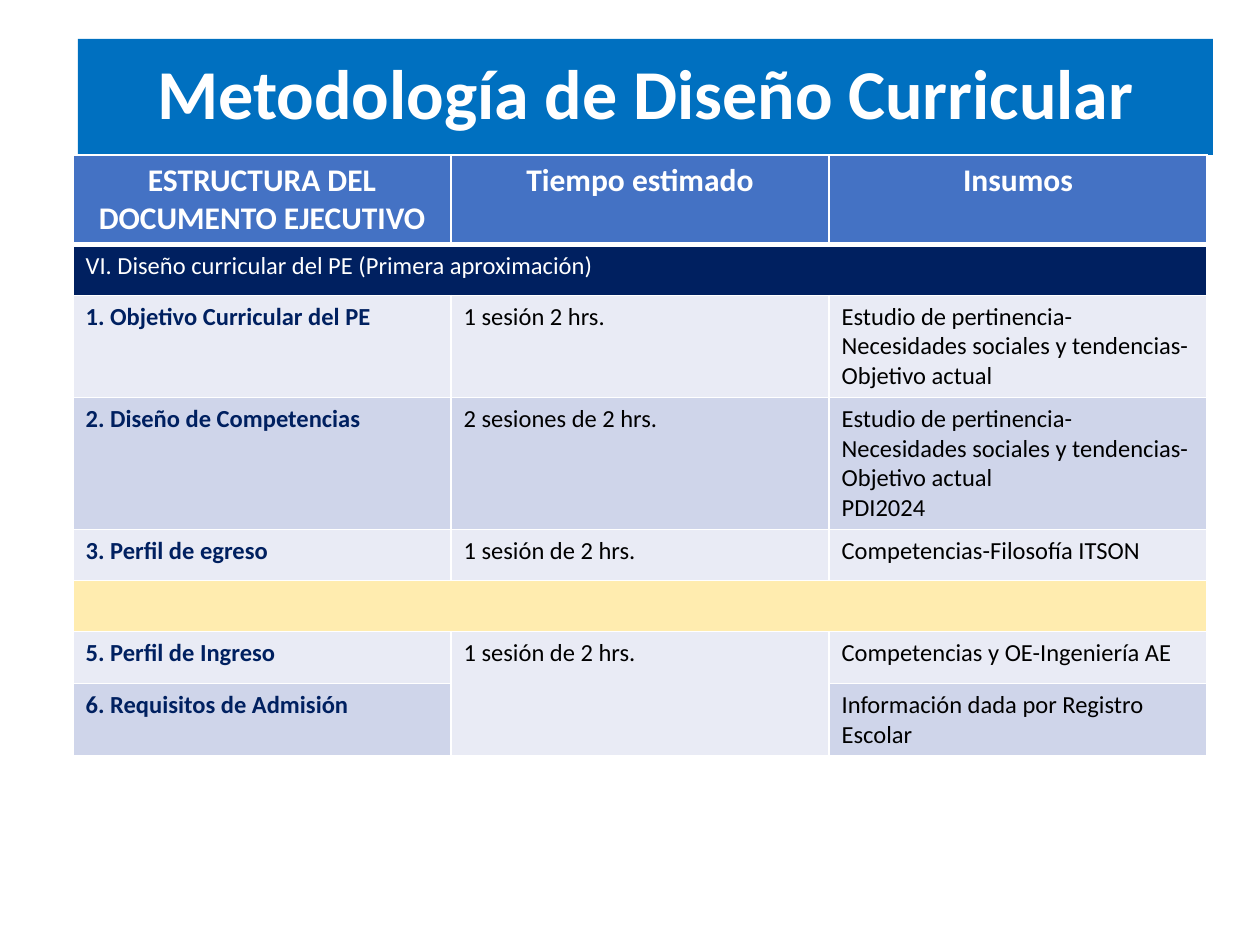
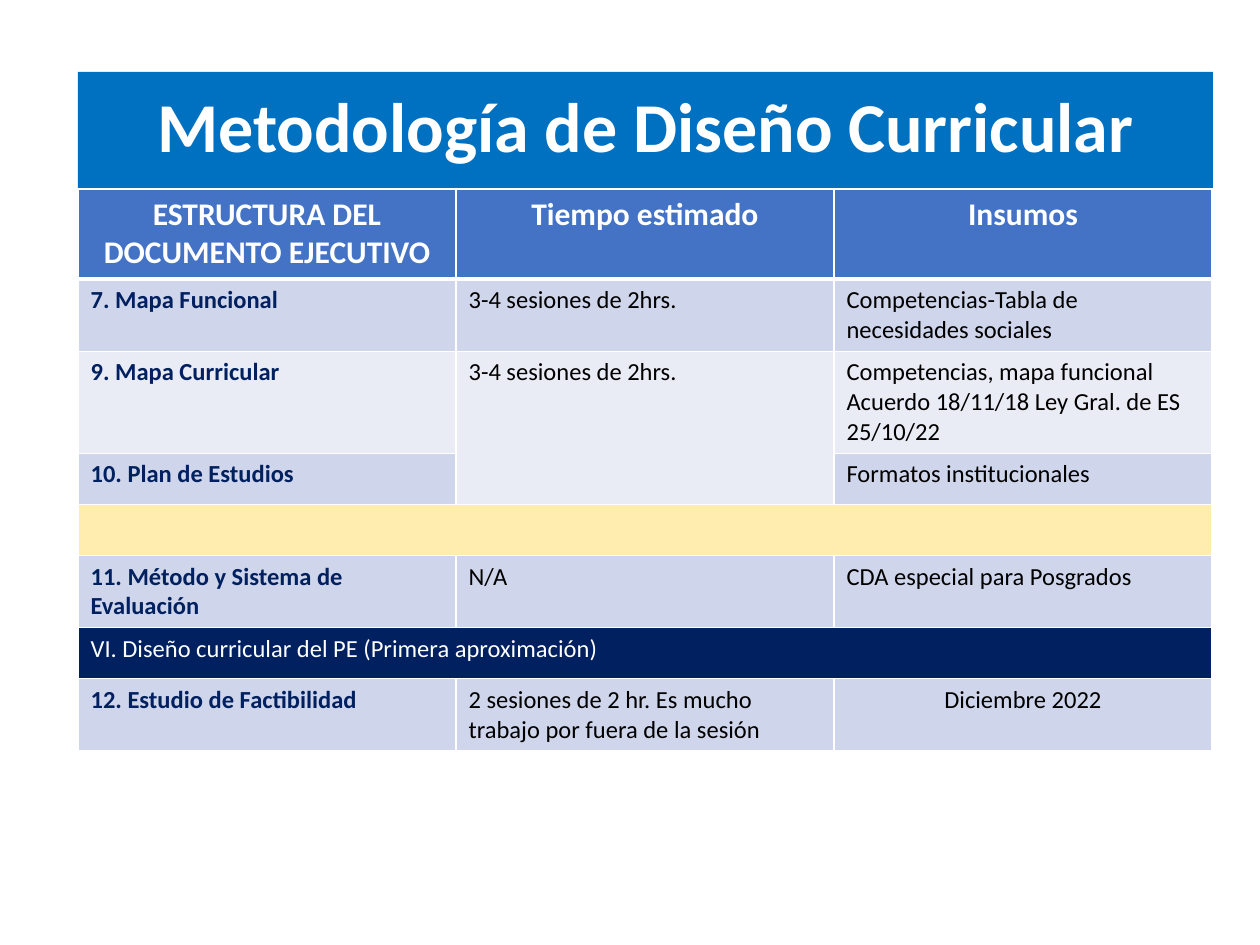
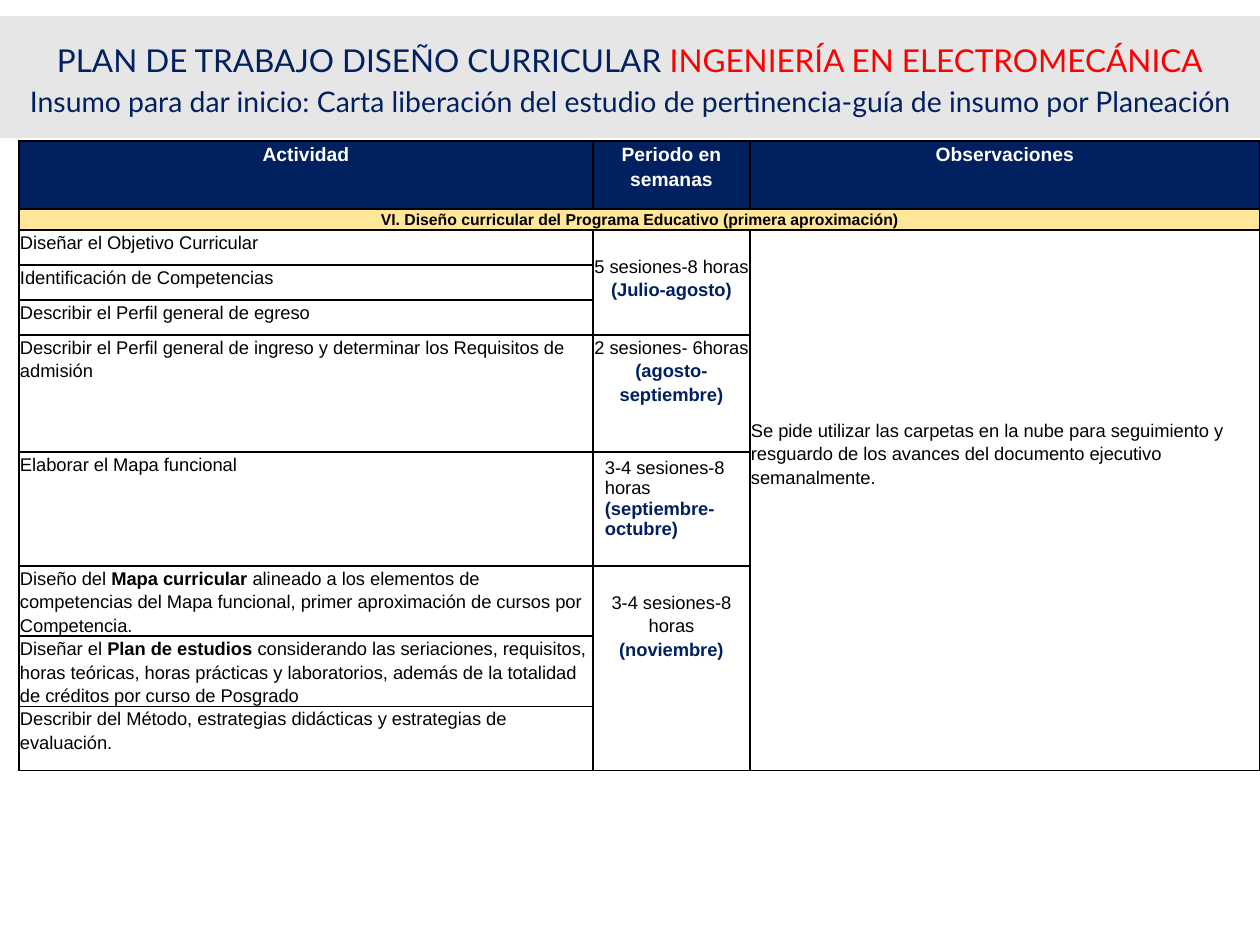
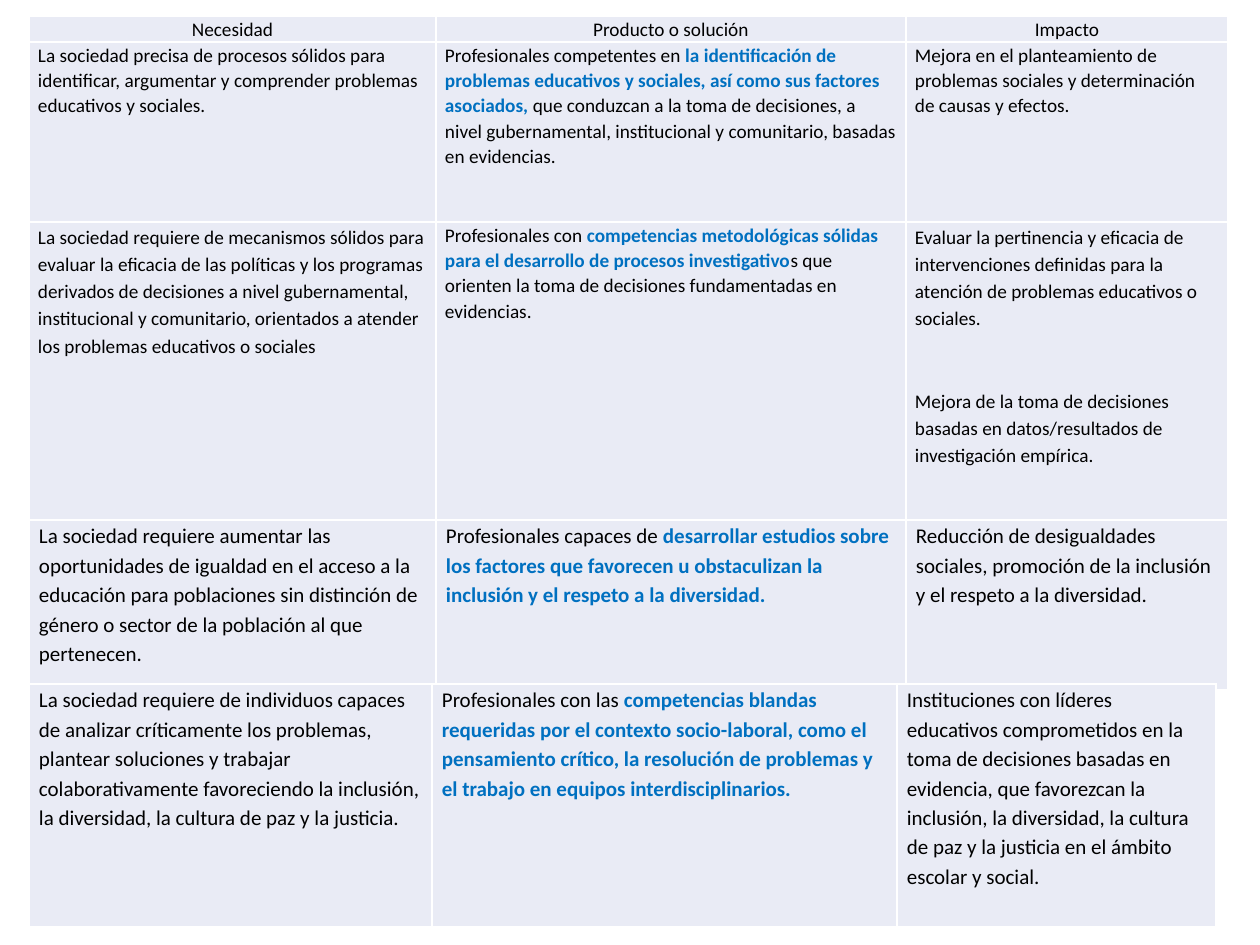
import dataclasses

import lxml.etree
import pptx
import pptx.dml.color
import pptx.enum.shapes
import pptx.enum.text
import pptx.oxml.ns
import pptx.util

PX = 914400 / 126
SLIDE_W, SLIDE_H = 1260, 945
ALIGN = pptx.enum.text.PP_ALIGN


@dataclasses.dataclass(frozen=True)
class Theme:
    white: str = "FFFFFF"
    black: str = "000000"
    navy: str = "002060"
    blue: str = "0070C0"
    header: str = "4472C4"
    light: str = "E9EBF5"
    mid: str = "CFD5EA"
    yellow: str = "FFECAF"
    gold: str = "FFE699"
    grey: str = "E7E6E6"
    red: str = "FF0000"
    title: float = 40
    heading: float = 18
    subheading: float = 16.2
    body: float = 14
    impact: float = 12
    need: float = 11
    plan: float = 10.5
    section: float = 9


T = Theme()


@dataclasses.dataclass(frozen=True)
class Style:
    size: float
    color: str = T.black
    bold: bool = False
    em_color: str = T.black
    font: str = "Calibri"
    align: int = ALIGN.LEFT
    line: float = 1.0
    after: float = 0
    gap: float = 0  # space before every paragraph but the first


# ---------- Content ----------

METHOD_TITLE = "Metodología de Diseño Curricular"
METHOD_HEADER = ("ESTRUCTURA DEL DOCUMENTO EJECUTIVO", "Tiempo estimado", "Insumos")
SECTION = "VI. Diseño curricular del PE (Primera aproximación)"
RELEVANCE = "Estudio de pertinencia-Necesidades sociales y tendencias-Objetivo actual"

# Each row: height, then one text for a full-width band or three cells.
# None continues the cell above; "\n" starts a paragraph.
METHOD_SLIDES = [
    dict(title_top=39, left=73, top=155, rows=[
        (89, METHOD_HEADER),
        (51, SECTION),
        (102, ("1. Objetivo Curricular del PE", "1 sesión 2 hrs.", RELEVANCE)),
        (132, ("2. Diseño de Competencias", "2 sesiones de 2 hrs.", RELEVANCE + "\nPDI2024")),
        (51, ("3. Perfil de egreso", "1 sesión de 2 hrs.", "Competencias-Filosofía ITSON")),
        (51, ""),
        (52, ("5. Perfil de Ingreso", "1 sesión de 2 hrs.", "Competencias y OE-Ingeniería AE")),
        (71, ("6. Requisitos de Admisión", None, "Información dada por Registro Escolar")),
    ]),
    dict(title_top=72, left=78, top=189, rows=[
        (90, METHOD_HEADER),
        (71, ("7. Mapa Funcional", "3-4 sesiones de 2hrs.",
              "Competencias-Tabla de necesidades sociales")),
        (102, ("9. Mapa Curricular", "3-4 sesiones de 2hrs.",
               "Competencias, mapa funcional\nAcuerdo 18/11/18 Ley Gral. de ES 25/10/22")),
        (51, ("10. Plan de Estudios", None, "Formatos institucionales")),
        (51, ""),
        (72, ("11. Método y Sistema de Evaluación", "N/A", "CDA especial para Posgrados")),
        (51, SECTION),
        (71, ("12. Estudio de Factibilidad",
              "2 sesiones de 2 hr. Es mucho trabajo por fuera de la sesión", "Diciembre 2022")),
    ]),
]
CENTRED_INPUTS = {"Diciembre 2022"}

PLAN_TITLE = [
    ("PLAN DE TRABAJO DISEÑO CURRICULAR ", T.heading, T.navy),
    ("INGENIERÍA EN ELECTROMECÁNICA", T.heading, T.red),
    "\n",
    ("Insumo para dar inicio: Carta liberación del estudio de pertinencia-guía de insumo "
     "por Planeación", T.subheading, T.navy),
]
PLAN_HEADER = ("Actividad", "Periodo en semanas", "Observaciones")
PLAN_SECTION = "VI. Diseño curricular del Programa Educativo (primera aproximación)"
PLAN_HEADER_H, PLAN_SECTION_H = 68, 21

# Asterisks enclose emphasised words.
PLAN_ACTIVITIES = [
    (35, "Diseñar el Objetivo Curricular"),
    (35, "Identificación de Competencias"),
    (35, "Describir el Perfil general de egreso"),
    (117, "Describir el Perfil general de ingreso y determinar los Requisitos de admisión"),
    (114, "Elaborar el Mapa funcional"),
    (70, "Diseño del *Mapa curricular* alineado a los elementos de competencias del Mapa "
         "funcional, primer aproximación de cursos por Competencia."),
    (70, "Diseñar el *Plan de estudios* considerando las seriaciones, requisitos, horas "
         "teóricas, horas prácticas y laboratorios, además de la totalidad de créditos por "
         "curso de Posgrado"),
    (64, "Describir del Método, estrategias didácticas y estrategias de evaluación."),
]
# Rows spanned, text, whether it is a centred block, top inset
PLAN_PERIODS = [
    (3, "5 sesiones-8 horas *(Julio-agosto)*", True, 24),
    (1, "2 sesiones- 6horas *(agosto-septiembre)*", True, 0),
    (1, "3-4 sesiones-8 horas *(septiembre-octubre)*", False, 6),
    (3, "3-4 sesiones-8 horas\n*(noviembre)*", True, 24),
]
PLAN_NOTE = ("Se pide utilizar las carpetas en la nube para seguimiento y resguardo de los "
             "avances del documento ejecutivo semanalmente.")

NEEDS_HEADER = ("Necesidad", "Producto o solución", "Impacto")
NEEDS_TABLES = [
    dict(top=16, widths=(407, 470, 322), size=T.need, inset=9, rows=[
        (26, NEEDS_HEADER),
        (180, (
            "La sociedad precisa de procesos sólidos para identificar, argumentar y comprender "
            "problemas educativos y sociales.",
            "Profesionales competentes en *la identificación de problemas educativos y sociales, "
            "así como sus factores asociados,* que conduzcan a la toma de decisiones, a nivel "
            "gubernamental, institucional y comunitario, basadas en evidencias.",
            "Mejora en el planteamiento de problemas sociales y determinación de causas y "
            "efectos.")),
        (299, (
            "La sociedad requiere de mecanismos sólidos para evaluar la eficacia de las políticas "
            "y los programas derivados de decisiones a nivel gubernamental, institucional y "
            "comunitario, orientados a atender los problemas educativos o sociales",
            "Profesionales con *competencias metodológicas sólidas para el desarrollo de procesos "
            "investigativo*s que orienten la toma de decisiones fundamentadas en evidencias.",
            "Evaluar la pertinencia y eficacia de intervenciones definidas para la atención de "
            "problemas educativos o sociales.\n"
            "Mejora de la toma de decisiones basadas en datos/resultados de investigación "
            "empírica.")),
    ], compact={(0, 0), (0, 1), (0, 2), (1, 0), (1, 1), (1, 2), (2, 1)}),
    dict(top=520, widths=(407, 470, 322), size=T.impact, inset=10, rows=[
        (170, (
            "La sociedad requiere aumentar las oportunidades de igualdad en el acceso a la "
            "educación para poblaciones sin distinción de género o sector de la población al que "
            "pertenecen.",
            "Profesionales capaces de *desarrollar estudios sobre los factores que favorecen u "
            "obstaculizan la inclusión y el respeto a la diversidad.*",
            "Reducción de desigualdades sociales, promoción de la inclusión y el respeto a la "
            "diversidad.")),
    ], compact=set()),
    dict(top=684, widths=(403, 465, 319), size=T.impact, inset=10, rows=[
        (243, (
            "La sociedad requiere de individuos capaces de analizar críticamente los problemas, "
            "plantear soluciones y trabajar colaborativamente favoreciendo la inclusión, la "
            "diversidad, la cultura de paz y la justicia.",
            "Profesionales con las *competencias blandas requeridas por el contexto "
            "socio-laboral, como el pensamiento crítico, la resolución de problemas y el trabajo "
            "en equipos interdisciplinarios.*",
            "Instituciones con líderes educativos comprometidos en la toma de decisiones basadas "
            "en evidencia, que favorezcan la inclusión, la diversidad, la cultura de paz y la "
            "justicia en el ámbito escolar y social.")),
    ], compact=set()),
]


# ---------- Shared parts ----------

def px(n):
    return pptx.util.Emu(round(n * PX))


def rgb(color):
    return pptx.dml.color.RGBColor.from_string(color)


def add_run(p, text, size, color, bold, font):
    r = p.add_run()
    r.text = text
    r.font.size = pptx.util.Pt(size)
    r.font.name = font
    r.font.bold = bold
    r.font.color.rgb = rgb(color)


def write_text(tf, text, style):
    """Write one paragraph per line; words between asterisks are emphasised."""
    for i, line in enumerate(text.split("\n")):
        p = tf.add_paragraph() if i else tf.paragraphs[0]
        p.alignment = style.align
        p.line_spacing = style.line
        p.space_after = pptx.util.Pt(style.after)
        if i and style.gap:
            p.space_before = pptx.util.Pt(style.gap)
        for j, part in enumerate(line.split("*")):
            if part:
                em = j % 2 == 1
                add_run(p, part, style.size, style.em_color if em else style.color,
                        em or style.bold, style.font)


def add_band(slide, left, top, width, height, fill):
    sp = slide.shapes.add_shape(pptx.enum.shapes.MSO_SHAPE.RECTANGLE,
                                px(left), px(top), px(width), px(height))
    sp.shadow.inherit = False
    sp.fill.solid()
    sp.fill.fore_color.rgb = rgb(fill)
    sp.line.fill.background()
    tf = sp.text_frame
    tf.word_wrap = True
    tf.vertical_anchor = pptx.enum.text.MSO_ANCHOR.MIDDLE
    return tf


def set_borders(cell, color, **widths):
    """Draw the four borders 1 pt wide, unless L, R, T or B gives another width."""
    tc_pr = cell._tc.get_or_add_tcPr()
    qn = pptx.oxml.ns.qn
    for side in "LRTB":
        ln = lxml.etree.SubElement(tc_pr, qn("a:ln" + side),
                                   w=str(pptx.util.Pt(widths.get(side, 1))))
        fill = lxml.etree.SubElement(ln, qn("a:solidFill"))
        lxml.etree.SubElement(fill, qn("a:srgbClr"), val=color)


def add_grid(slide, left, top, widths, heights, border, fill, thick_header=False):
    tbl = slide.shapes.add_table(len(heights), len(widths), px(left), px(top),
                                 px(sum(widths)), px(sum(heights))).table
    tbl.first_row = tbl.horz_banding = False
    for col, width in zip(tbl.columns, widths):
        col.width = px(width)
    for i, (row, height) in enumerate(zip(tbl.rows, heights)):
        row.height = px(height)
        thick = {0: {"B": 3}, 1: {"T": 3}}.get(i, {}) if thick_header else {}
        for cell in row.cells:
            set_borders(cell, border, **thick)
            paint(cell, fill)
    return tbl


def paint(cell, fill):
    cell.fill.solid()
    cell.fill.fore_color.rgb = rgb(fill)


def set_insets(cell, side, top=0):
    cell.margin_left = cell.margin_right = px(side)
    cell.margin_top, cell.margin_bottom = px(top), 0


# ---------- Slides ----------

def add_method_slide(slide, title_top, left, top, rows):
    tf = add_band(slide, 78, title_top, 1135, 116, T.blue)
    write_text(tf, METHOD_TITLE, Style(T.title, T.white, True, align=ALIGN.CENTER, line=0.9))
    tbl = add_grid(slide, left, top, (378,) * 3, [h for h, _ in rows], T.white, T.light, True)
    head = Style(T.heading, T.white, True, align=ALIGN.CENTER)
    body = Style(T.body)
    item = Style(T.body, T.navy, True)
    for i, (_, texts) in enumerate(rows):
        if isinstance(texts, str):
            for cell in tbl.rows[i].cells:
                paint(cell, T.navy if texts else T.yellow)
            tbl.cell(i, 0).merge(tbl.cell(i, 2))
            if texts:
                write_text(tbl.cell(i, 0).text_frame, texts, Style(T.body, T.white))
            continue
        for j, text in enumerate(texts):
            cell = tbl.cell(i, j)
            if text is None:
                tbl.cell(i - 1, j).merge(cell)
                continue
            paint(cell, T.header if i == 0 else T.mid if i % 2 else T.light)
            style = head if i == 0 else item if j == 0 else body
            if text in CENTRED_INPUTS:
                style = dataclasses.replace(style, align=ALIGN.CENTER)
            write_text(cell.text_frame, text, style)


def add_plan_slide(slide):
    p = add_band(slide, 0, 16, SLIDE_W, 122, T.grey).paragraphs[0]
    p.alignment = ALIGN.CENTER
    p.line_spacing = 1.15
    p.space_after = pptx.util.Pt(10)
    for part in PLAN_TITLE:
        if part == "\n":
            p.add_line_break()
        else:
            text, size, color = part
            add_run(p, text, size, color, False, "Lato")

    heights = [PLAN_HEADER_H, PLAN_SECTION_H] + [h for h, _ in PLAN_ACTIVITIES]
    tbl = add_grid(slide, 19, 141, (574, 157, 510), heights, T.black, T.white)
    body = Style(T.plan, font="Arial", line=1.15)
    period = dataclasses.replace(body, em_color=T.navy, align=ALIGN.CENTER)
    head = dataclasses.replace(period, size=T.need, color=T.white, bold=True)
    section = dataclasses.replace(head, size=T.section, color=T.black, after=3)

    def put(row, col, text, style, rows=1, cols=1, side=1, top=0):
        cell = tbl.cell(row, col)
        if rows * cols > 1:
            cell.merge(tbl.cell(row + rows - 1, col + cols - 1))
        set_insets(cell, side, top)
        write_text(cell.text_frame, text, style)

    for j, text in enumerate(PLAN_HEADER):
        paint(tbl.cell(0, j), T.navy)
        put(0, j, text, head)
        paint(tbl.cell(1, j), T.gold)
    put(1, 0, PLAN_SECTION, section, cols=3)
    for i, (_, text) in enumerate(PLAN_ACTIVITIES, 2):
        put(i, 0, text, body)
    row = 2
    for span, text, centred, top in PLAN_PERIODS:
        style = period if centred else dataclasses.replace(period, align=ALIGN.LEFT, line=1.0)
        put(row, 1, text, style, rows=span, side=1 if centred else 12, top=top)
        row += span
    put(2, 2, PLAN_NOTE, body, rows=len(PLAN_ACTIVITIES), top=188)


def add_needs_table(slide, top, widths, size, inset, rows, compact):
    tbl = add_grid(slide, 29, top, widths, [h for h, _ in rows], T.white, T.light)
    for i, (_, texts) in enumerate(rows):
        for j, text in enumerate(texts):
            cell = tbl.cell(i, j)
            set_insets(cell, inset)
            write_text(cell.text_frame, text, Style(
                size, em_color=T.blue, after=8, gap=23.5,
                line=1.07 if (i, j) in compact else 1.15,
                align=ALIGN.CENTER if texts is NEEDS_HEADER else ALIGN.LEFT))


def main():
    prs = pptx.Presentation()
    prs.slide_width, prs.slide_height = px(SLIDE_W), px(SLIDE_H)

    def new_slide():
        return prs.slides.add_slide(prs.slide_layouts[6])

    for content in METHOD_SLIDES:
        add_method_slide(new_slide(), **content)
    add_plan_slide(new_slide())
    needs = new_slide()
    for content in NEEDS_TABLES:
        add_needs_table(needs, **content)
    prs.save("out.pptx")


if __name__ == "__main__":
    main()
